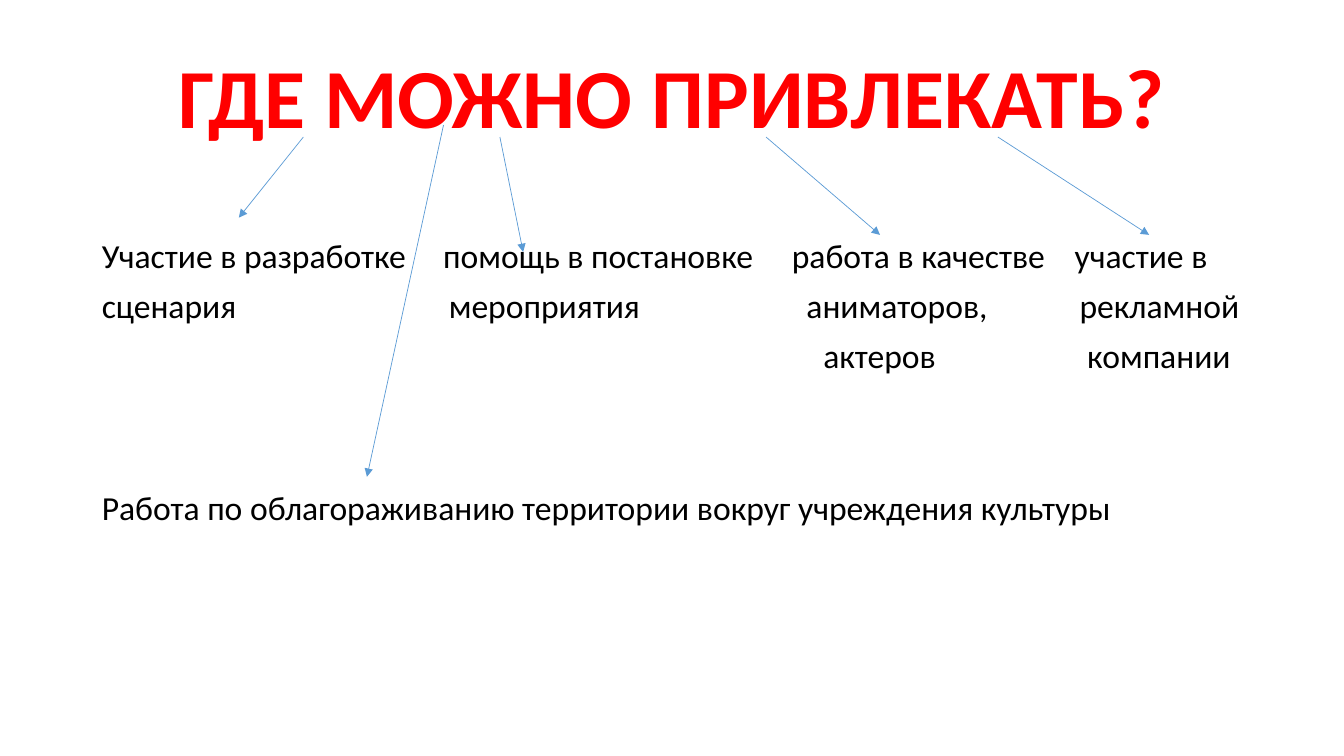
from lxml.etree import SubElement
from pptx import Presentation
from pptx.dml.color import RGBColor
from pptx.enum.shapes import MSO_CONNECTOR
from pptx.enum.text import MSO_ANCHOR, MSO_AUTO_SIZE, PP_ALIGN
from pptx.oxml.ns import qn
from pptx.util import Pt

COLORS = {"title": "FF0000", "text": "000000", "arrow": "5B9BD5"}
FONT = "Calibri"
LEFT, BODY_TOP = 65.5, 167.3

# Each line: (text, left indent, space before)
BODY = [
    ("Участие в разработке", 0, 10),
    ("сценария", 0, 10),
    ("Работа по облагораживанию территории вокруг учреждения культуры", 0, 118),
]

# Each column: (left, width, lines)
COLUMNS = [
    (309.5, 245, [("помощь в постановке", 0, 10), ("мероприятия", 4, 10)]),
    (558.5, 202, [("работа в качестве", 0, 10), ("аниматоров,", 10.5, 10),
                  ("актеров", 22.5, 10)]),
    (760.5, 145, [("участие в", 0, 10), ("рекламной", 3.5, 10),
                  ("компании", 9, 10)]),
]

ARROWS = [
    ((216.7, 97.9), (170.6, 155.5)),
    ((357.1, 97.9), (373.7, 180)),
    ((547.2, 97.9), (628.6, 167.8)),
    ((712.8, 97.9), (820.8, 167.8)),
    ((316.8, 89.3), (262.1, 340.6)),
]


def place(sp, left, top, width, height):
    sp.left, sp.top, sp.width, sp.height = map(Pt, (left, top, width, height))


def format_paragraph(p, size, color, bold=False, before=0):
    p.line_spacing = 0.9
    p.space_before = Pt(before)
    for r in p.runs:
        r.font.name = FONT
        r.font.size = Pt(size)
        r.font.bold = bold
        r.font.color.rgb = RGBColor.from_string(COLORS[color])


def indent_plain(p, indent):
    """Remove the bullet and set the left indent in points."""
    pPr = p._p.get_or_add_pPr()
    pPr.set("marL", str(int(Pt(indent))))
    pPr.set("indent", "0")
    SubElement(pPr, qn("a:buNone"))


def fill_title(sp, text):
    place(sp, LEFT, 35.3, 828, 144.7)
    tf = sp.text_frame
    tf.word_wrap = True
    tf.auto_size = MSO_AUTO_SIZE.NONE
    tf.vertical_anchor = MSO_ANCHOR.BOTTOM
    tf.margin_bottom = Pt(75.5)
    tf.text = text
    p = tf.paragraphs[0]
    p.alignment = PP_ALIGN.CENTER
    format_paragraph(p, 60, "title", bold=True)


def fill_lines(sp, lines):
    tf = sp.text_frame
    tf.word_wrap = True
    tf.auto_size = MSO_AUTO_SIZE.NONE
    tf.vertical_anchor = MSO_ANCHOR.TOP
    tf.text = "\n".join(text for text, _, _ in lines)
    for p, (_, indent, before) in zip(tf.paragraphs, lines):
        format_paragraph(p, 24, "text", before=before)
        indent_plain(p, indent)


def add_column(slide, left, width, lines):
    box = slide.shapes.add_textbox(
        *map(Pt, (left, BODY_TOP, width, 36 * len(lines) + 8)))
    fill_lines(box, lines)


def add_arrow(slide, start, end):
    line = slide.shapes.add_connector(
        MSO_CONNECTOR.STRAIGHT, *map(Pt, start + end))
    line.line.color.rgb = RGBColor.from_string(COLORS["arrow"])
    line.line.width = Pt(0.5)
    SubElement(line.line._get_or_add_ln(), qn("a:tailEnd"), type="triangle")
    SubElement(line._element.spPr, qn("a:effectLst"))


def main():
    prs = Presentation()
    prs.slide_width, prs.slide_height = Pt(960), Pt(540)
    slide = prs.slides.add_slide(prs.slide_layouts[1])
    fill_title(slide.shapes.title, "ГДЕ МОЖНО ПРИВЛЕКАТЬ?")
    body = slide.placeholders[1]
    place(body, LEFT, BODY_TOP, 828, 311.8)
    fill_lines(body, BODY)
    for left, width, lines in COLUMNS:
        add_column(slide, left, width, lines)
    for start, end in ARROWS:
        add_arrow(slide, start, end)
    prs.save("out.pptx")


if __name__ == "__main__":
    main()
